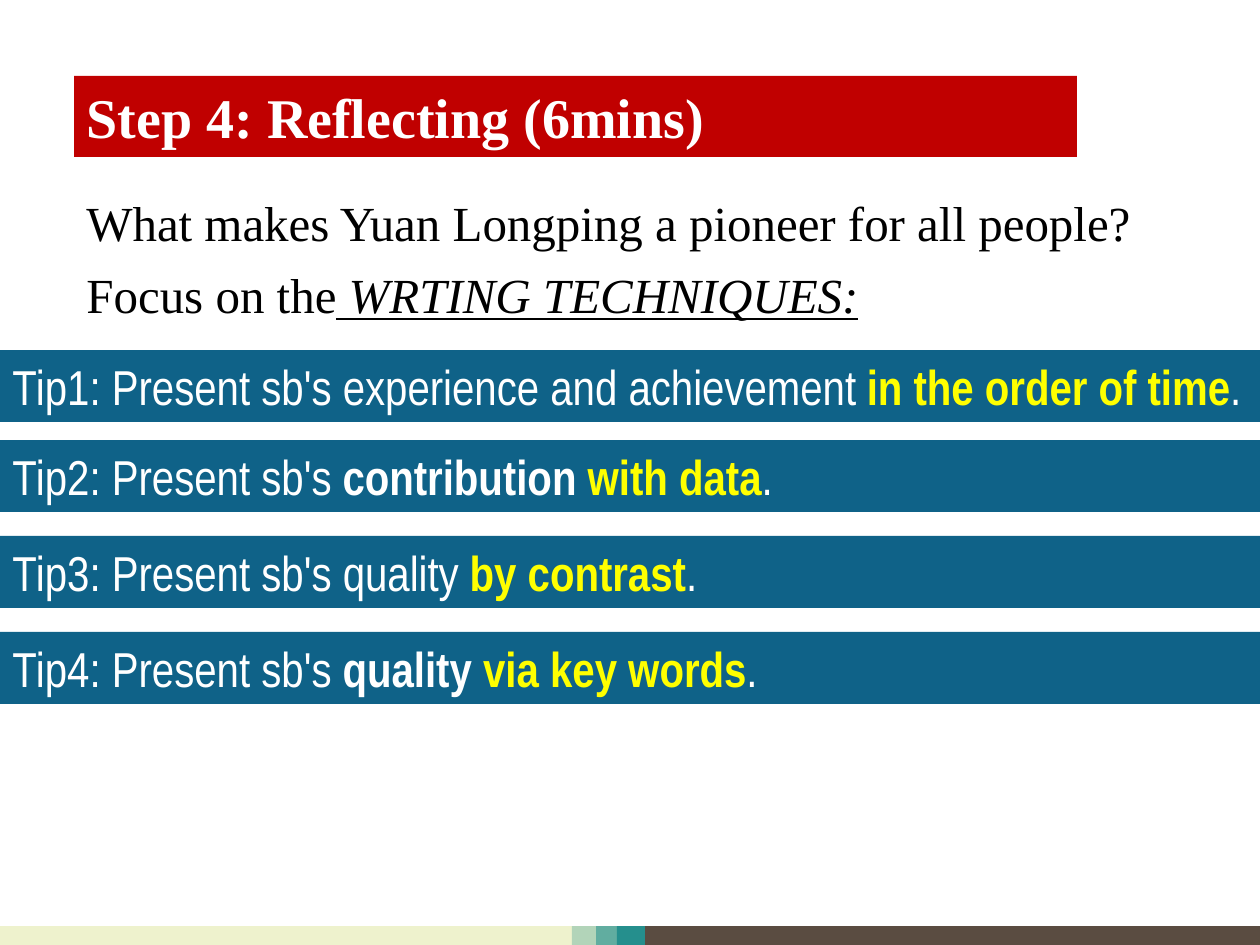
import pptx
import pptx.dml.color
import pptx.enum.shapes
import pptx.enum.text
import pptx.util

PX = 914400 / 126
SERIF, NARROW = "Times New Roman", "Arial Narrow"
BLACK, WHITE, YELLOW = "000000", "FFFFFF", "FFFF00"
RED, BLUE = "C00000", "0F6288"

FOOTER_BANDS = [
    (0, 580, "EEF2CD"),
    (644, 616, "5A4C41"),
    (572, 39, "B2D4B9"),
    (596, 33, "61ADA0"),
    (617, 28, "258F8D"),
]

TIPS = [
    (350, [("Tip1: Present sb's experience and achievement ", WHITE, False),
           ("in the order of time", YELLOW, True)]),
    (440, [("Tip2: Present sb's ", WHITE, False),
           ("contribution ", WHITE, True), ("with data", YELLOW, True)]),
    (536, [("Tip3: Present sb's quality ", WHITE, False),
           ("by contrast", YELLOW, True)]),
    (632, [("Tip4: Present sb's ", WHITE, False),
           ("quality ", WHITE, True), ("via key words", YELLOW, True)]),
]


def emu(px):
    """Turn pixels into EMU."""
    return pptx.util.Emu(round(px * PX))


def paint(colour_format, colour):
    """Set a fill or a font to a solid hex colour."""
    colour_format.fill.solid()
    colour_format.fill.fore_color.rgb = pptx.dml.color.RGBColor.from_string(colour)


def place(shape, left, top, width, height):
    """Move and size a shape in pixels."""
    shape.left, shape.top = emu(left), emu(top)
    shape.width, shape.height = emu(width), emu(height)


def set_frame(shape, wrap=True):
    """Anchor the text at the top left and return its first paragraph."""
    frame = shape.text_frame
    frame.word_wrap = wrap
    frame.auto_size = pptx.enum.text.MSO_AUTO_SIZE.NONE
    frame.vertical_anchor = pptx.enum.text.MSO_ANCHOR.MIDDLE
    paragraph = frame.paragraphs[0]
    paragraph.alignment = pptx.enum.text.PP_ALIGN.LEFT
    return paragraph


def add_run(paragraph, text, font, colour, size=28, bold=False, emphasis=False):
    """Add one formatted run."""
    run = paragraph.add_run()
    run.text = text
    run.font.name = font
    run.font.size = pptx.util.Pt(size)
    run.font.bold = bold
    run.font.italic = run.font.underline = emphasis
    paint(run.font, colour)


def add_band(slide, left, top, width, height, colour):
    """Add a plain rectangle without outline."""
    band = slide.shapes.add_shape(
        pptx.enum.shapes.MSO_SHAPE.RECTANGLE,
        emu(left), emu(top), emu(width), emu(height))
    band.shadow.inherit = False
    band.line.fill.background()
    paint(band, colour)
    return band


def add_title(slide, text):
    """Format the title placeholder as a red banner."""
    title = slide.shapes.title
    place(title, 74, 76, 1003, 81)
    paint(title, RED)
    add_run(set_frame(title), text, SERIF, WHITE, size=32, bold=True)


def add_line(slide, top, width, wrap=True):
    """Add a text box for one line and return its paragraph."""
    box = slide.shapes.add_textbox(emu(74), emu(top), emu(width), emu(72))
    return set_frame(box, wrap)


def add_tip(slide, top, runs):
    """Add a full-width tip that ends with a full stop."""
    paragraph = set_frame(add_band(slide, 0, top, 1260, 72, BLUE))
    for text, colour, bold in runs + [(".", WHITE, False)]:
        add_run(paragraph, text, NARROW, colour, bold=bold)


def main():
    """Build and save the slide."""
    deck = pptx.Presentation()
    deck.slide_width, deck.slide_height = emu(1260), emu(945)
    slide = deck.slides.add_slide(deck.slide_layouts.get_by_name("Title Only"))
    for left, width, colour in FOOTER_BANDS:
        add_band(slide, left, 926, width, 20, colour)
    add_title(slide, "Step 4: Reflecting (6mins)")
    question = add_line(slide, 186, 1106)
    add_run(question, "What makes Yuan Longping a pioneer for all people?", SERIF, BLACK)
    focus = add_line(slide, 258, 798, wrap=False)
    add_run(focus, "Focus on the", SERIF, BLACK)
    add_run(focus, " WRTING TECHNIQUES:", SERIF, BLACK, emphasis=True)
    for top, runs in TIPS:
        add_tip(slide, top, runs)
    deck.save("out.pptx")


if __name__ == "__main__":
    main()
